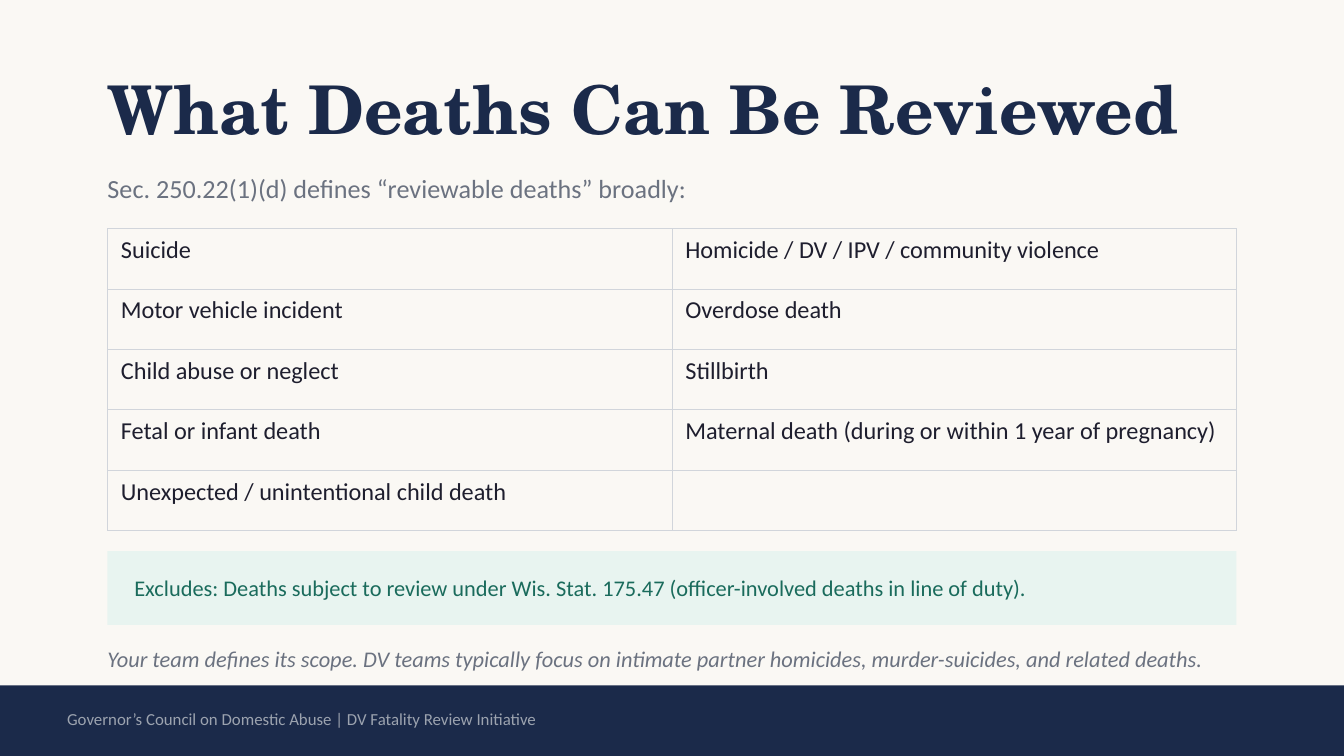
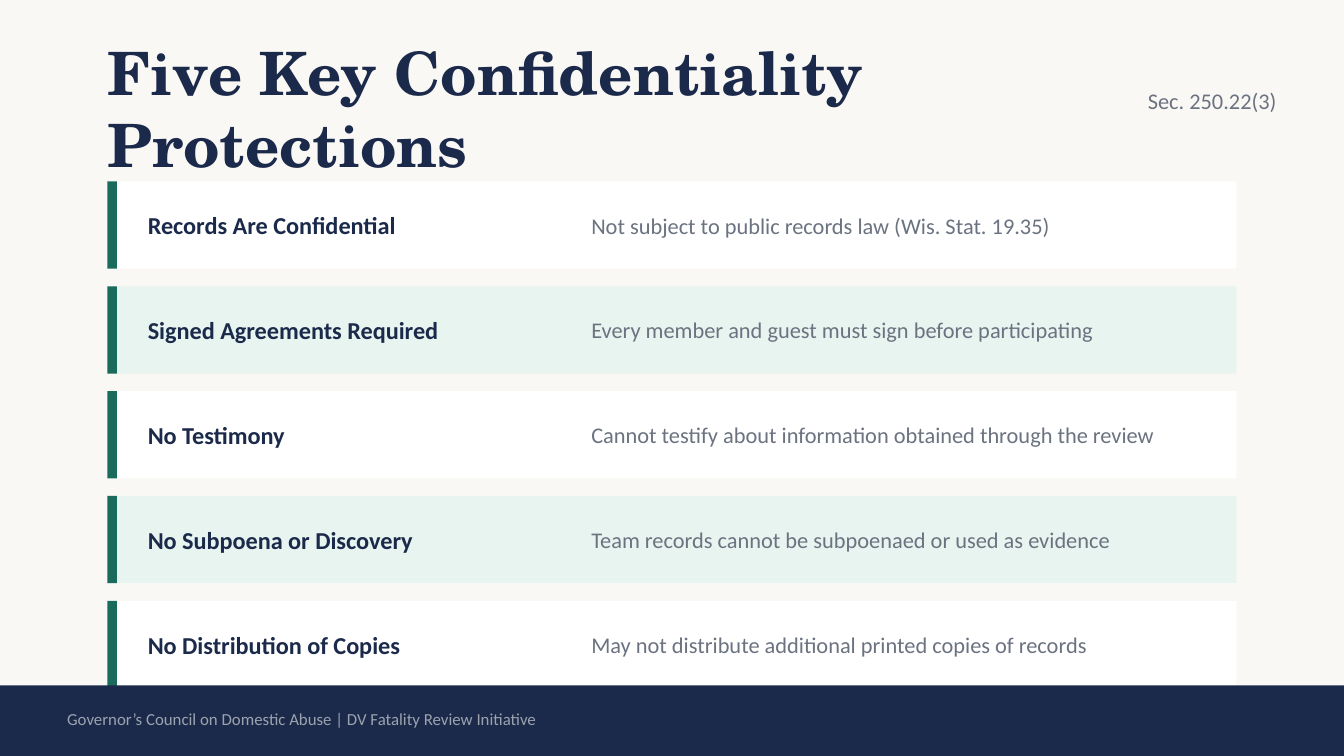
import pptx
import pptx.dml.color
import pptx.enum.shapes
import pptx.enum.text
import pptx.oxml
import pptx.oxml.ns
import pptx.util
from dataclasses import dataclass

Inches = pptx.util.Inches
Pt = pptx.util.Pt
ALIGN = pptx.enum.text.PP_ALIGN


@dataclass(frozen=True)
class Theme:
    page: str = "FAF8F4"
    navy: str = "1B2A4A"
    green: str = "1A6B5C"
    mint: str = "E8F4F0"
    white: str = "FFFFFF"
    ink: str = "1E1E2E"
    grey: str = "6B7280"
    footer: str = "9CA3AF"
    border: str = "D1D5DB"
    heading: str = "TeX Gyre Schola"
    body: str = "Calibri"
    subtitle_size: int = 14
    label_size: int = 13
    text_size: int = 12
    footer_size: int = 9
    border_width: float = 0.5


T = Theme()
LEFT, WIDTH = 0.8, 8.4

FOOTER = "Governor’s Council on Domestic Abuse | DV Fatality Review Initiative"

DEATHS_TITLE = "What Deaths Can Be Reviewed"
DEATHS_INTRO = "Sec. 250.22(1)(d) defines “reviewable deaths” broadly:"
DEATHS = [
    ("Suicide", "Homicide / DV / IPV / community violence"),
    ("Motor vehicle incident", "Overdose death"),
    ("Child abuse or neglect", "Stillbirth"),
    ("Fetal or infant death", "Maternal death (during or within 1 year of pregnancy)"),
    ("Unexpected / unintentional child death", ""),
]
EXCLUSION = ("Excludes: Deaths subject to review under Wis. Stat. 175.47 "
             "(officer-involved deaths in line of duty).")
SCOPE_NOTE = ("Your team defines its scope. DV teams typically focus on intimate partner "
              "homicides, murder-suicides, and related deaths.")

PROTECTIONS_TITLE = "Five Key Confidentiality Protections"
PROTECTIONS_SECTION = "Sec. 250.22(3)"
PROTECTIONS = [
    ("Records Are Confidential", "Not subject to public records law (Wis. Stat. 19.35)"),
    ("Signed Agreements Required", "Every member and guest must sign before participating"),
    ("No Testimony", "Cannot testify about information obtained through the review"),
    ("No Subpoena or Discovery", "Team records cannot be subpoenaed or used as evidence"),
    ("No Distribution of Copies", "May not distribute additional printed copies of records"),
]


def rgb(color):
    return pptx.dml.color.RGBColor.from_string(color)


def style(p, size, color, font=T.body, bold=False, italic=False):
    for r in p.runs:
        r.font.size = Pt(size)
        r.font.name = font
        r.font.color.rgb = rgb(color)
        r.font.bold = bold
        r.font.italic = italic


def add_text(slide, text, x, y, w, h, size, color, align=ALIGN.LEFT, **look):
    tf = slide.shapes.add_textbox(Inches(x), Inches(y), Inches(w), Inches(h)).text_frame
    tf.word_wrap = True
    tf.vertical_anchor = pptx.enum.text.MSO_ANCHOR.MIDDLE
    tf.margin_left = tf.margin_right = tf.margin_top = tf.margin_bottom = 0
    p = tf.paragraphs[0]
    p.text = text
    p.alignment = align
    style(p, size, color, **look)


def add_rect(slide, x, y, w, h, color):
    sp = slide.shapes.add_shape(pptx.enum.shapes.MSO_SHAPE.RECTANGLE,
                                Inches(x), Inches(y), Inches(w), Inches(h))
    sp.shadow.inherit = False
    sp.fill.solid()
    sp.fill.fore_color.rgb = rgb(color)
    sp.line.fill.background()


def add_slide(prs, title, title_size):
    slide = prs.slides.add_slide(prs.slide_layouts[6])
    slide.background.fill.solid()
    slide.background.fill.fore_color.rgb = rgb(T.page)
    add_text(slide, title, LEFT, 0.4, WIDTH, 0.8, title_size, T.navy,
             font=T.heading, bold=True)
    return slide


def add_footer(slide):
    add_rect(slide, 0, 5.1, 10, 0.53, T.navy)
    add_text(slide, FOOTER, 0.5, 5.15, 9, 0.4, T.footer_size, T.footer)


def set_borders(cell):
    tcPr = cell._tc.get_or_add_tcPr()
    for side in ("lnL", "lnR", "lnT", "lnB"):
        tcPr.append(pptx.oxml.parse_xml(
            f'<a:{side} {pptx.oxml.ns.nsdecls("a")} w="{Pt(T.border_width)}">'
            f'<a:solidFill><a:srgbClr val="{T.border}"/></a:solidFill></a:{side}>'))


def add_deaths_table(slide, y, row_height):
    rows, cols = len(DEATHS), len(DEATHS[0])
    table = slide.shapes.add_table(rows, cols, Inches(LEFT), Inches(y), Inches(WIDTH),
                                   Inches(row_height * rows)).table
    table.first_row = table.horz_banding = False
    for i, row in enumerate(DEATHS):
        for j, text in enumerate(row):
            cell = table.cell(i, j)
            set_borders(cell)
            cell.fill.background()
            if text:
                p = cell.text_frame.paragraphs[0]
                p.text = text
                style(p, T.label_size, T.ink)


def build_deaths(prs):
    slide = add_slide(prs, DEATHS_TITLE, 36)
    add_text(slide, DEATHS_INTRO, LEFT, 1.2, WIDTH, 0.4, T.subtitle_size, T.grey)
    add_deaths_table(slide, 1.7, 0.45)
    add_rect(slide, LEFT, 4.1, WIDTH, 0.55, T.mint)
    add_text(slide, EXCLUSION, LEFT + 0.2, 4.1, WIDTH - 0.4, 0.55, T.text_size, T.green)
    add_text(slide, SCOPE_NOTE, LEFT, 4.75, WIDTH, 0.3, T.text_size, T.grey, italic=True)
    add_footer(slide)


def build_protections(prs):
    slide = add_slide(prs, PROTECTIONS_TITLE, 32)
    add_text(slide, PROTECTIONS_SECTION, 7.5, 0.55, 2, 0.4, T.text_size, T.grey,
             align=ALIGN.RIGHT)
    top, height, gap = 1.35, 0.65, 0.13
    for i, (name, detail) in enumerate(PROTECTIONS):
        y = top + i * (height + gap)
        add_rect(slide, LEFT, y, WIDTH, height, T.mint if i % 2 else T.white)
        add_rect(slide, LEFT, y, 0.07, height, T.green)
        add_text(slide, name, 1.1, y, 3.2, height, T.label_size, T.navy, bold=True)
        add_text(slide, detail, 4.4, y, 4.6, height, T.text_size, T.grey)
    add_footer(slide)


def main():
    prs = pptx.Presentation()
    prs.slide_width = Inches(10)
    prs.slide_height = Inches(10) * 9 // 16
    build_deaths(prs)
    build_protections(prs)
    prs.save("out.pptx")


if __name__ == "__main__":
    main()
